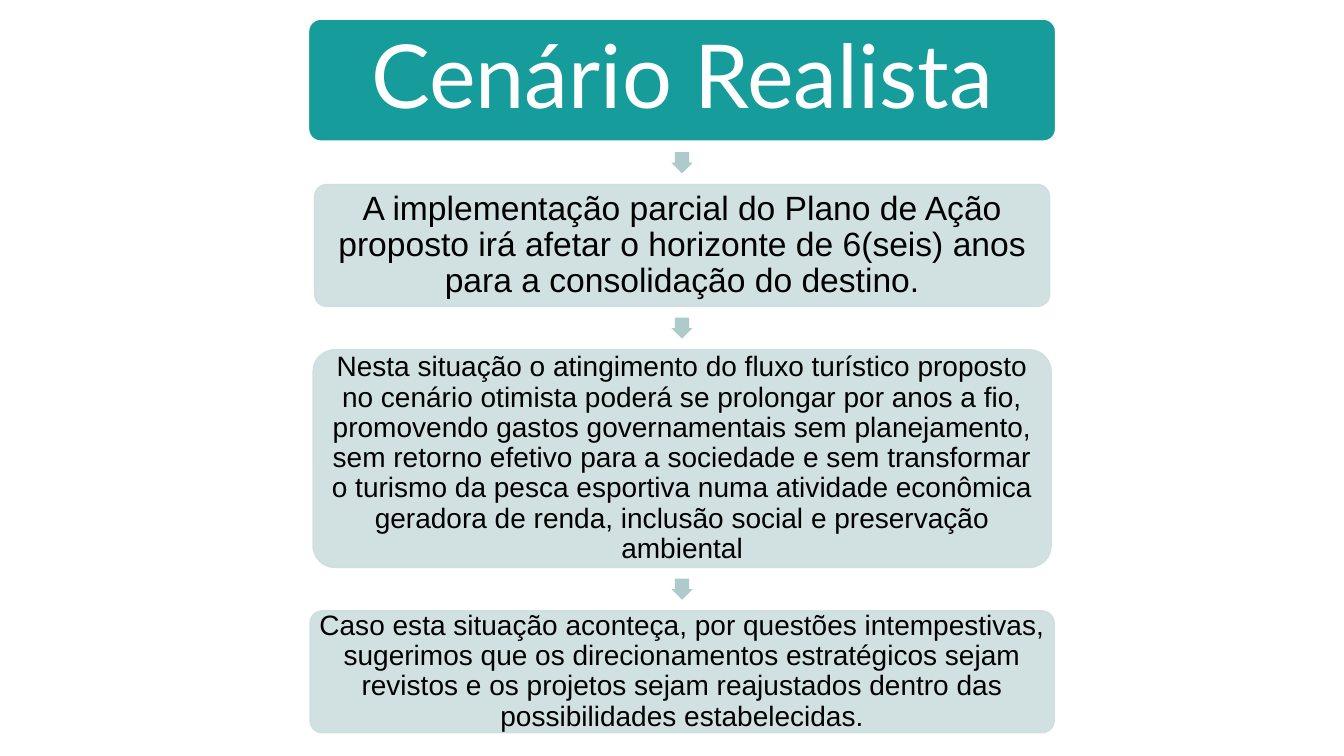
import dataclasses

import lxml.etree
import pptx
import pptx.dml.color
import pptx.enum.shapes
import pptx.enum.text
import pptx.oxml.ns
import pptx.util

PX = 9144  # EMU per px, 100 px to the inch
AXIS = 1353  # twice the x of the column's centre
TOP = 19
GAP = 11
ARROW = 21
INSET = 4  # from the heading box to its text
COLORS = {
    "head": "169C9A",
    "step": "CCDEDE",
    "arrow": "ACCBCA",
    "white": "FFFFFF",
    "black": "000000",
}
KINDS = pptx.enum.shapes.MSO_SHAPE


@dataclasses.dataclass
class Step:
    text: str
    width: int
    height: int
    size: int


HEAD = Step("Cenário Realista", 741, 121, 63)
STEPS = [
    Step("A implementação parcial do Plano de Ação proposto irá afetar o "
         "horizonte de 6(seis) anos para a consolidação do destino.",
         729, 121, 24),
    Step("Nesta situação o atingimento do fluxo turístico proposto no cenário "
         "otimista poderá se prolongar por anos a fio, promovendo gastos "
         "governamentais sem planejamento, sem retorno efetivo para a "
         "sociedade e sem transformar o turismo da pesca esportiva numa "
         "atividade econômica geradora de renda, inclusão social e "
         "preservação ambiental",
         732, 216, 20),
    Step("Caso esta situação aconteça, por questões intempestivas, sugerimos "
         "que os direcionamentos estratégicos sejam revistos e os projetos "
         "sejam reajustados dentro das possibilidades estabelecidas.",
         738, 121, 20),
]


def px(value: float) -> pptx.util.Emu:
    return pptx.util.Emu(round(value * PX))


def color(name: str) -> pptx.dml.color.RGBColor:
    return pptx.dml.color.RGBColor.from_string(COLORS[name])


def fade(shape) -> None:
    """Make the fill and the line of the shape 90 % opaque."""
    tag = pptx.oxml.ns.qn("a:alpha")
    for node in shape._element.spPr.iter(pptx.oxml.ns.qn("a:srgbClr")):
        lxml.etree.SubElement(node, tag).set("val", "90000")


def add_box(slide, step: Step, top: int, fill: str, line: str):
    box = slide.shapes.add_shape(
        KINDS.ROUNDED_RECTANGLE, px((AXIS - step.width) / 2), px(top),
        px(step.width), px(step.height))
    box.adjustments[0] = 0.1
    box.shadow.inherit = False
    box.fill.solid()
    box.fill.fore_color.rgb = color(fill)
    box.line.color.rgb = color(line)
    box.line.width = pptx.util.Pt(1)
    return box


def add_arrow(slide, top: int) -> None:
    arrow = slide.shapes.add_shape(
        KINDS.DOWN_ARROW, px((AXIS - ARROW) / 2), px(top),
        px(ARROW), px(ARROW))
    arrow.adjustments[0] = 0.667
    arrow.adjustments[1] = 0.5
    arrow.shadow.inherit = False
    arrow.fill.solid()
    arrow.fill.fore_color.rgb = color("arrow")
    arrow.line.fill.background()


def write(shape, step: Step, font: str, ink: str, margin: int) -> None:
    frame = shape.text_frame
    frame.word_wrap = True
    frame.auto_size = pptx.enum.text.MSO_AUTO_SIZE.NONE
    frame.vertical_anchor = pptx.enum.text.MSO_ANCHOR.MIDDLE
    frame.margin_left = frame.margin_right = px(margin)
    frame.margin_top = frame.margin_bottom = px(margin)
    para = frame.paragraphs[0]
    para.alignment = pptx.enum.text.PP_ALIGN.CENTER
    para.line_spacing = 0.9
    run = para.add_run()
    run.text = step.text
    run.font.name = font
    run.font.size = pptx.util.Pt(step.size)
    run.font.color.rgb = color(ink)


def add_head(slide) -> None:
    box = add_box(slide, HEAD, TOP, "head", "white")
    title = slide.shapes.title
    title.left, title.top = box.left + px(INSET), box.top + px(INSET)
    title.width = box.width - 2 * px(INSET)
    title.height = box.height - 2 * px(INSET)
    write(title, HEAD, "Lato", "white", 9)
    box._element.addnext(title._element)  # title in front of its box


def main() -> None:
    deck = pptx.Presentation()
    deck.slide_width, deck.slide_height = px(1333), px(750)
    slide = deck.slides.add_slide(deck.slide_layouts.get_by_name("Title Only"))
    add_head(slide)
    end = TOP + HEAD.height
    for step in STEPS:
        add_arrow(slide, end + GAP)
        top = end + 2 * GAP + ARROW
        box = add_box(slide, step, top, "step", "step")
        fade(box)
        write(box, step, "Arial", "black", 3)
        end = top + step.height
    deck.save("out.pptx")


if __name__ == "__main__":
    main()
